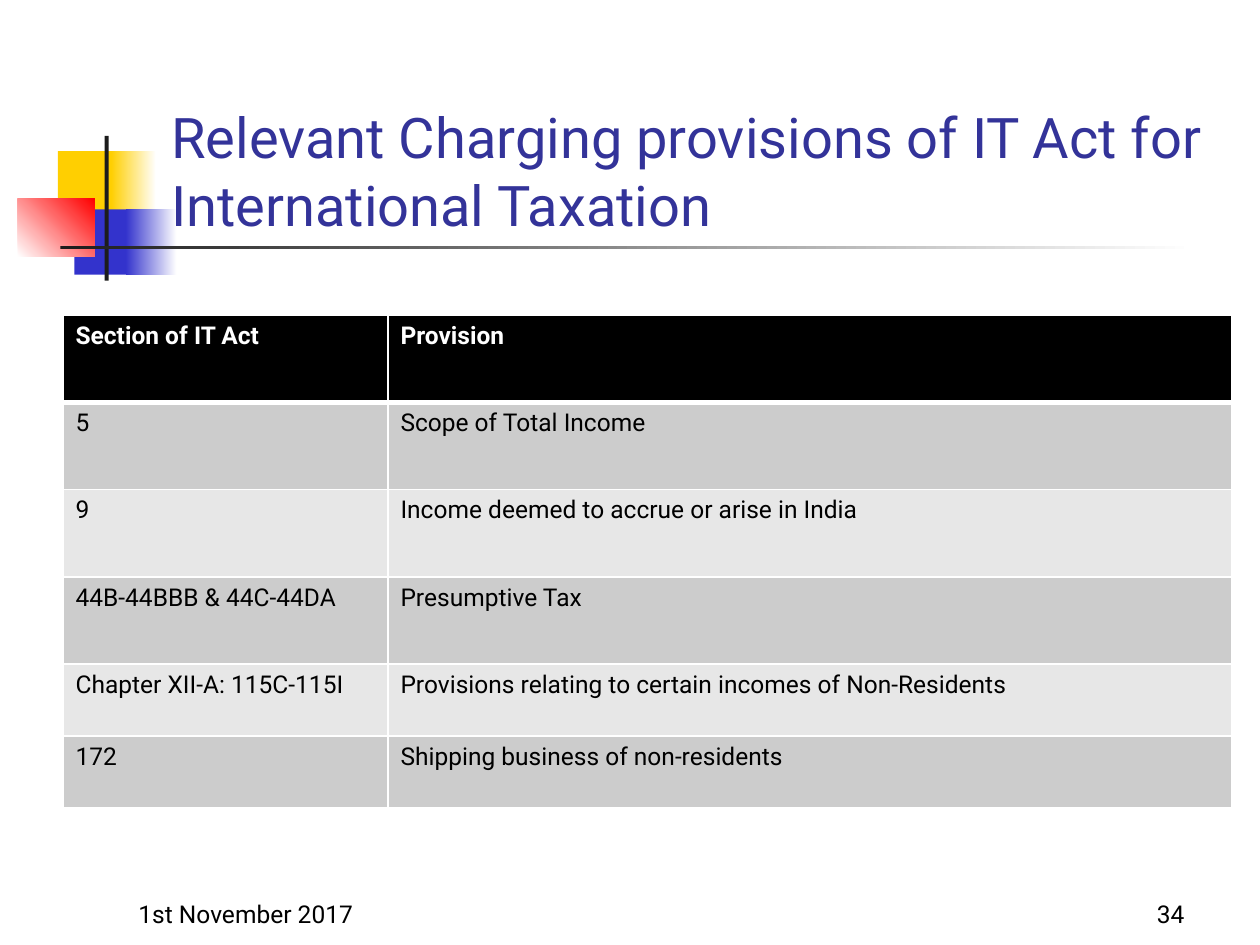
from dataclasses import dataclass

from lxml import etree
from pptx import Presentation
from pptx.dml.color import RGBColor as RGB
from pptx.enum.shapes import MSO_SHAPE as Shape
from pptx.enum.text import MSO_ANCHOR as Anchor
from pptx.enum.text import MSO_AUTO_SIZE as AutoSize
from pptx.enum.text import PP_ALIGN as Align
from pptx.oxml.ns import qn
from pptx.util import Cm, Pt


@dataclass(frozen=True)
class Theme:
    font: str = "Roboto"
    title_size: int = 32
    body_size: int = 14
    title: str = "333399"
    text: str = "000000"
    white: str = "FFFFFF"
    yellow: str = "FFCF01"
    blue: str = "3333CC"
    red: str = "FF0000"
    ink: str = "1C1C1C"
    header: str = "000000"
    bands: tuple = ("CCCCCC", "E7E7E7")


theme = Theme()


def add_span(frame, text, size, color, bold=False, align=Align.LEFT):
    para = frame.paragraphs[0]
    para.alignment = align
    span = para.add_run()
    span.text = text
    span.font.name = theme.font
    span.font.size = Pt(size)
    span.font.bold = bold
    span.font.color.rgb = RGB.from_string(color)


def add_border(cell, side, points):
    line = etree.SubElement(cell._tc.get_or_add_tcPr(), qn(f"a:ln{side}"), w=str(Pt(points)))
    fill = etree.SubElement(line, qn("a:solidFill"))
    etree.SubElement(fill, qn("a:srgbClr"), val=theme.white)


deck = Presentation()
deck.slide_width, deck.slide_height = Cm(25.4), Cm(19.05)
page = deck.slides.add_slide(deck.slide_layouts[5])

ornaments = [
    (1.17, 3.05, 1.22, 1.32, [theme.yellow], 0),
    (2.24, 3.05, 0.91, 1.32, [theme.yellow, theme.white], 0),
    (1.5, 4.22, 1.17, 1.32, [theme.blue], 0),
    (2.54, 4.22, 1.02, 1.32, [theme.blue, theme.white], 0),
    (0.36, 4.01, 1.55, 1.17, [theme.white, theme.red], 45),
    (2.11, 2.74, 0.08, 2.92, [theme.ink], 0),
    (1.22, 4.95, 22.86, 0.08, [theme.ink, theme.white], 0),
]
for left, top, width, height, colors, angle in ornaments:
    block = page.shapes.add_shape(Shape.RECTANGLE, Cm(left), Cm(top), Cm(width), Cm(height))
    block.shadow.inherit = False
    block.line.fill.background()
    if len(colors) == 1:
        block.fill.solid()
        block.fill.fore_color.rgb = RGB.from_string(colors[0])
    else:
        block.fill.gradient()
        block.fill.gradient_angle = angle
        for stop, color in zip(block.fill.gradient_stops, colors):
            stop.color.rgb = RGB.from_string(color)

title = page.shapes.title
title.left, title.top, title.width, title.height = Cm(3.2), Cm(1.73), Cm(21.64), Cm(3.18)
title.text_frame.word_wrap = True
title.text_frame.auto_size = AutoSize.NONE
title.text_frame.vertical_anchor = Anchor.BOTTOM
add_span(
    title.text_frame,
    "Relevant Charging provisions of IT Act for International Taxation",
    theme.title_size,
    theme.title,
)
title.element.getparent().append(title.element)

footers = [
    (2.54, "1st November 2017", Align.LEFT),
    (18.85, "34", Align.RIGHT),
]
for left, text, align in footers:
    box = page.shapes.add_textbox(Cm(left), Cm(17.58), Cm(5.28), Cm(1.27))
    box.text_frame.word_wrap = True
    box.text_frame.vertical_anchor = Anchor.BOTTOM
    add_span(box.text_frame, text, theme.body_size, theme.text, align=align)

provisions = [
    ("Section of IT Act", "Provision"),
    ("5", "Scope of Total Income"),
    ("9", "Income deemed to accrue or arise in India"),
    ("44B-44BBB & 44C-44DA", "Presumptive Tax"),
    ("Chapter XII-A: 115C-115I", "Provisions relating to certain incomes of Non-Residents"),
    ("172", "Shipping business of non-residents"),
]
column_widths = [6.55, 17.02]
row_heights = [1.76] * 4 + [1.45] * 2
table = page.shapes.add_table(
    len(provisions), len(column_widths), Cm(1.27), Cm(6.35),
    Cm(sum(column_widths)), Cm(sum(row_heights)),
).table
for column, width in zip(table.columns, column_widths):
    column.width = Cm(width)
for row, height in zip(table.rows, row_heights):
    row.height = Cm(height)

for row_index, entries in enumerate(provisions):
    is_header = row_index == 0
    fill_color = theme.header if is_header else theme.bands[(row_index - 1) % 2]
    text_color = theme.white if is_header else theme.text
    top_line = 3 if row_index == 1 else 1
    bottom_line = 3 if is_header else 1
    for column_index, text in enumerate(entries):
        cell = table.cell(row_index, column_index)
        for side, points in zip("LRTB", (1, 1, top_line, bottom_line)):
            add_border(cell, side, points)
        cell.fill.solid()
        cell.fill.fore_color.rgb = RGB.from_string(fill_color)
        add_span(cell.text_frame, text, theme.body_size, text_color, bold=is_header)

deck.save("out.pptx")
